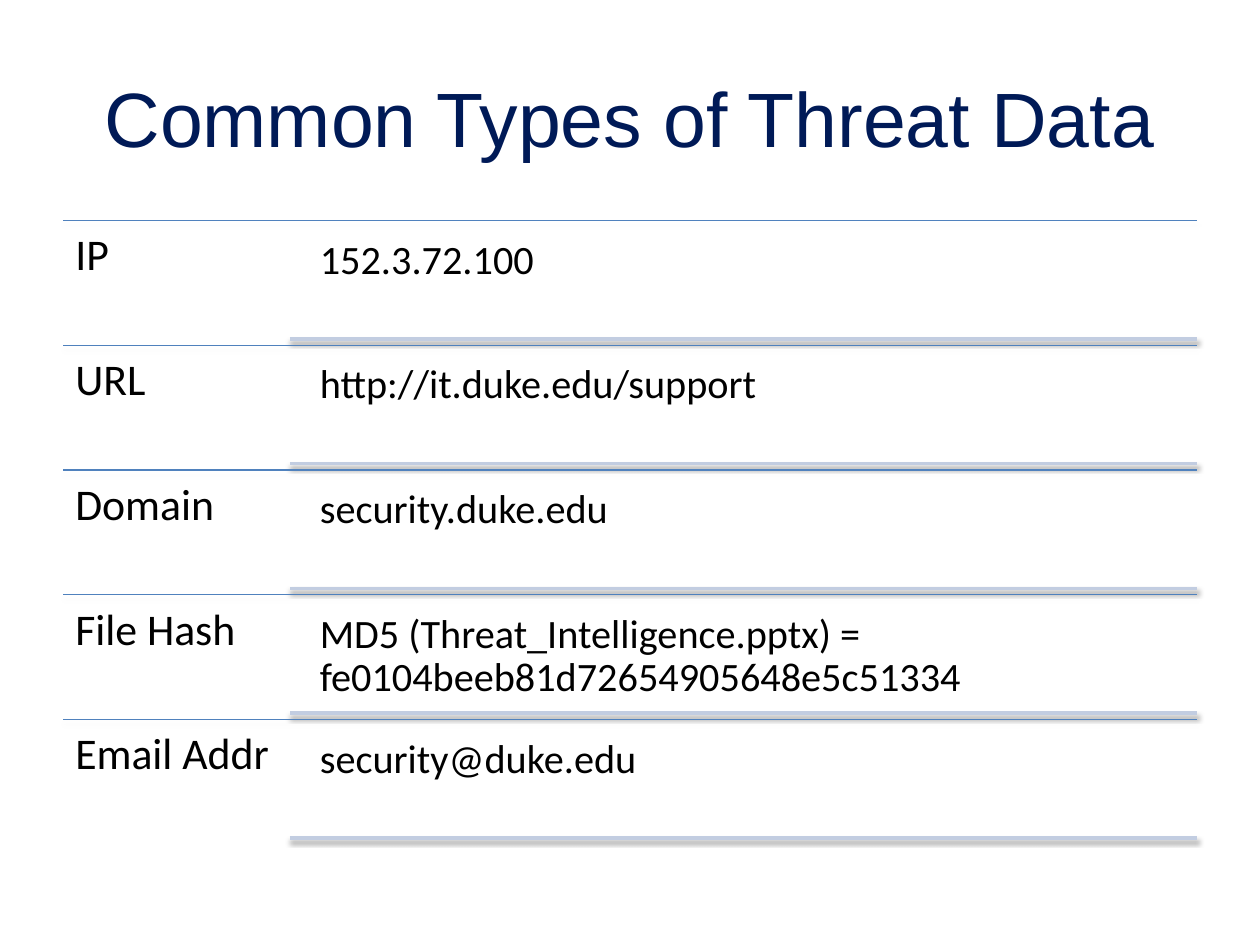
from lxml import etree
from pptx import Presentation
from pptx.dml.color import RGBColor
from pptx.enum.shapes import MSO_CONNECTOR
from pptx.enum.text import MSO_ANCHOR, PP_ALIGN
from pptx.oxml.ns import qn
from pptx.util import Inches, Pt

STRAIGHT = MSO_CONNECTOR.STRAIGHT
TOP, MIDDLE = MSO_ANCHOR.TOP, MSO_ANCHOR.MIDDLE
LEFT, CENTER = PP_ALIGN.LEFT, PP_ALIGN.CENTER

NAVY = RGBColor(0x00, 0x1A, 0x57)
BLUE = RGBColor(0x4F, 0x81, 0xBD)
PALE_BLUE = RGBColor(0xC2, 0xCD, 0xE1)
BLACK = RGBColor(0x00, 0x00, 0x00)

TABLE_LEFT, TABLE_RIGHT, TABLE_TOP = 0.5, 9.5, 1.75
LABEL_WIDTH = 1.8
ROW_HEIGHT = 0.99
VALUE_INSET = 0.05

THREAT_DATA = [
    ("IP", "152.3.72.100"),
    ("URL", "http://it.duke.edu/support"),
    ("Domain", "security.duke.edu"),
    ("File Hash", "MD5 (Threat_Intelligence.pptx) = fe0104beeb81d72654905648e5c51334"),
    ("Email Addr", "security@duke.edu"),
]


def add_text(shapes, text, left, top, width, height, size, font_name="Calibri",
             color=BLACK, anchor=TOP, alignment=LEFT, line_spacing=0.9):
    box = shapes.add_textbox(Inches(left), Inches(top), Inches(width), Inches(height))
    frame = box.text_frame
    frame.word_wrap = True
    frame.vertical_anchor = anchor
    frame.margin_left = frame.margin_right = Inches(0.1)
    frame.margin_top = frame.margin_bottom = Inches(0.1)
    paragraph = frame.paragraphs[0]
    paragraph.text = text
    paragraph.alignment = alignment
    paragraph.line_spacing = line_spacing
    paragraph.font.name = font_name
    paragraph.font.size = Pt(size)
    paragraph.font.color.rgb = color


def add_shadow(connector, distance, opacity):
    effects = etree.SubElement(connector._element.spPr, qn("a:effectLst"))
    shadow = etree.SubElement(
        effects, qn("a:outerShdw"), blurRad=str(Pt(3.1)), dist=str(Pt(distance)),
        dir=str(90 * 60000), rotWithShape="0")
    color = etree.SubElement(shadow, qn("a:srgbClr"), val=str(BLACK))
    etree.SubElement(color, qn("a:alpha"), val=str(opacity * 1000))


def add_rule(shapes, left, y, color, width, shadow_distance, shadow_opacity):
    rule = shapes.add_connector(
        STRAIGHT, Inches(left), Inches(y), Inches(TABLE_RIGHT), Inches(y))
    rule.line.color.rgb = color
    rule.line.width = Pt(width)
    add_shadow(rule, shadow_distance, shadow_opacity)


def add_row(shapes, top, label, value):
    value_left = TABLE_LEFT + LABEL_WIDTH
    value_height = ROW_HEIGHT - 2 * VALUE_INSET
    value_top = top + VALUE_INSET
    add_rule(shapes, TABLE_LEFT, top, BLUE, 0.75, 1.8, 35)
    add_text(shapes, label, TABLE_LEFT, top, LABEL_WIDTH, ROW_HEIGHT, 25)
    add_text(shapes, value, value_left + 0.14, value_top, 7.07, value_height, 23)
    add_rule(shapes, value_left, value_top + value_height, PALE_BLUE, 2, 1.6, 38)


def main():
    presentation = Presentation()
    presentation.slide_width = Inches(10)
    presentation.slide_height = Inches(7.5)
    slide = presentation.slides.add_slide(presentation.slide_layouts[6])
    add_text(slide.shapes, "Common Types of Threat Data", 0.5, 0.3, 9, 1.25, 44,
             "Arial", NAVY, MIDDLE, CENTER, 1.0)
    rows = slide.shapes.add_group_shape()
    for index, (label, value) in enumerate(THREAT_DATA):
        add_row(rows.shapes, TABLE_TOP + index * ROW_HEIGHT, label, value)
    presentation.save("out.pptx")


if __name__ == "__main__":
    main()
